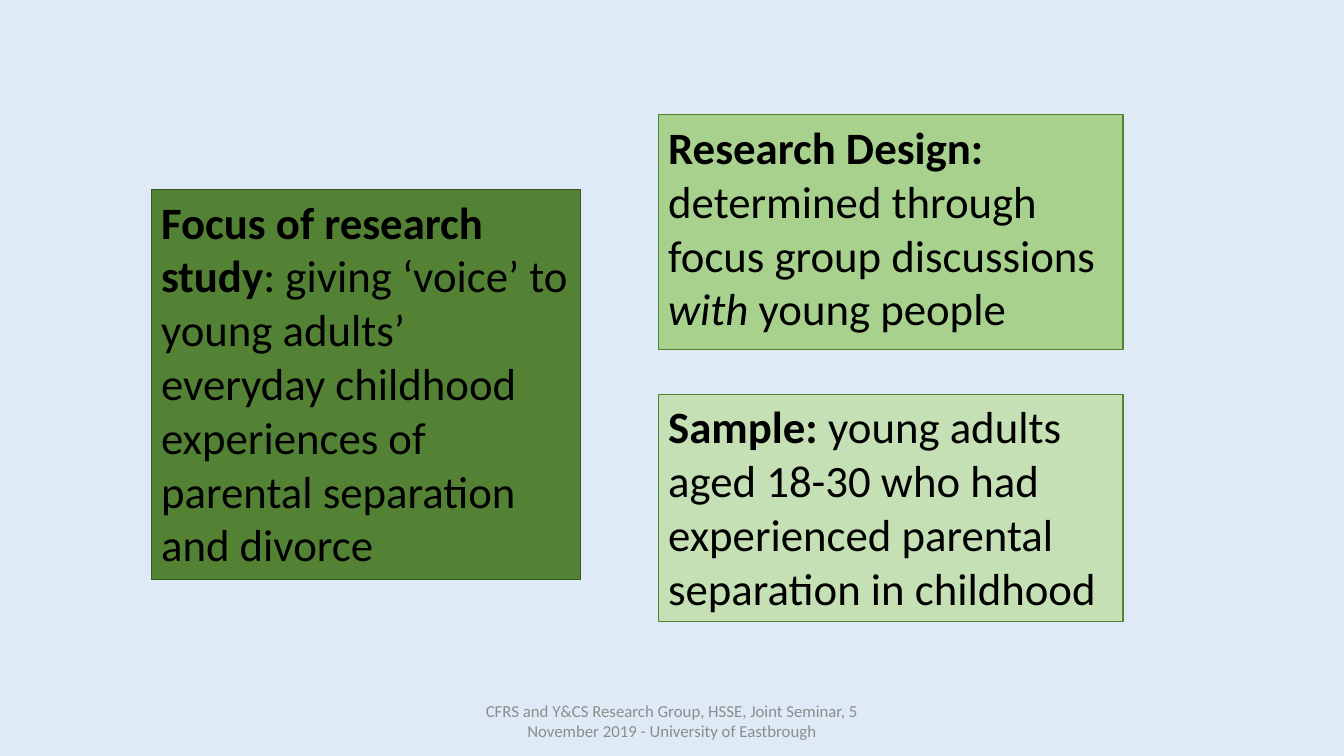
from dataclasses import dataclass

from pptx import Presentation
from pptx import util as u
from pptx.dml.color import RGBColor
from pptx.enum import shapes, text


@dataclass(frozen=True)
class Theme:
    font: str = "Calibri"
    body_size: float = 32
    footer_size: float = 12
    line_width: float = 0.75
    background: str = "DEEBF7"
    ink: str = "000000"
    muted: str = "8C8C8C"
    deep_green: str = "385723"
    dark_green: str = "548235"
    mid_green: str = "A9D18E"
    light_green: str = "C5E0B4"


def apply(target, values):
    for name, value in values.items():
        setattr(target, name, value)


class SlideBuilder:
    def __init__(self, page, theme):
        self.page = page
        self.theme = theme

    def background(self):
        fill = self.page.background.fill
        fill.solid()
        fill.fore_color.rgb = RGBColor.from_string(self.theme.background)

    def add_words(self, box, spans, size, color, align, frame_format):
        """Fill a box with one paragraph of (words, font format) spans."""
        apply(box.text_frame, {"word_wrap": True, **frame_format})
        para = box.text_frame.paragraphs[0]
        para.alignment = align
        for words, font_format in spans:
            span = para.add_run()
            span.text = words
            apply(span.font, {"name": self.theme.font, "size": u.Pt(size), **font_format})
            span.font.color.rgb = RGBColor.from_string(color)

    def panel(self, bounds, fill, line, spans):
        box = self.page.shapes.add_shape(
            shapes.MSO_SHAPE.RECTANGLE, *map(u.Pt, bounds))
        box.shadow.inherit = False
        box.fill.solid()
        box.fill.fore_color.rgb = RGBColor.from_string(fill)
        box.line.color.rgb = RGBColor.from_string(line)
        box.line.width = u.Pt(self.theme.line_width)
        self.add_words(box, spans, self.theme.body_size, self.theme.ink,
                       text.PP_ALIGN.LEFT,
                       {"vertical_anchor": text.MSO_ANCHOR.TOP,
                        "auto_size": text.MSO_AUTO_SIZE.SHAPE_TO_FIT_TEXT})

    def footer(self, bounds, words):
        box = self.page.shapes.add_textbox(*map(u.Pt, bounds))
        self.add_words(box, [(words, {})], self.theme.footer_size, self.theme.muted,
                       text.PP_ALIGN.CENTER,
                       {"vertical_anchor": text.MSO_ANCHOR.MIDDLE,
                        "auto_size": text.MSO_AUTO_SIZE.NONE})


def main():
    theme = Theme()
    deck = Presentation()
    apply(deck, {"slide_width": u.Pt(960), "slide_height": u.Pt(540)})
    builder = SlideBuilder(deck.slides.add_slide(deck.slide_layouts[6]), theme)
    builder.background()

    bold, italic, plain = {"bold": True}, {"italic": True}, {}

    # Footer
    builder.footer((318, 500.5, 324, 29),
                   "CFRS and Y&CS Research Group, HSSE, Joint Seminar, 5 "
                   "November 2019 - University of Eastbrough")

    # Left panel: focus
    builder.panel((108, 135.3, 306.7, 278.6), theme.dark_green, theme.deep_green, [
        ("Focus of research study", bold),
        (": giving ‘voice’ to young adults’ everyday childhood experiences "
         "of parental separation and divorce", plain),
    ])

    # Right column: design above sample
    right_left, right_width = 470.2, 332
    right_panels = [
        (82, 167.8, theme.mid_green, [
            ("Research Design: ", bold),
            ("determined through focus group discussions ", plain),
            ("with", italic),
            (" young people", plain),
        ]),
        (281.5, 162.7, theme.light_green, [
            ("Sample: ", bold),
            ("young adults aged 18-30 who had experienced parental "
             "separation in childhood", plain),
        ]),
    ]
    for top, height, fill, spans in right_panels:
        builder.panel((right_left, top, right_width, height),
                      fill, theme.dark_green, spans)

    deck.save("out.pptx")


if __name__ == "__main__":
    main()
